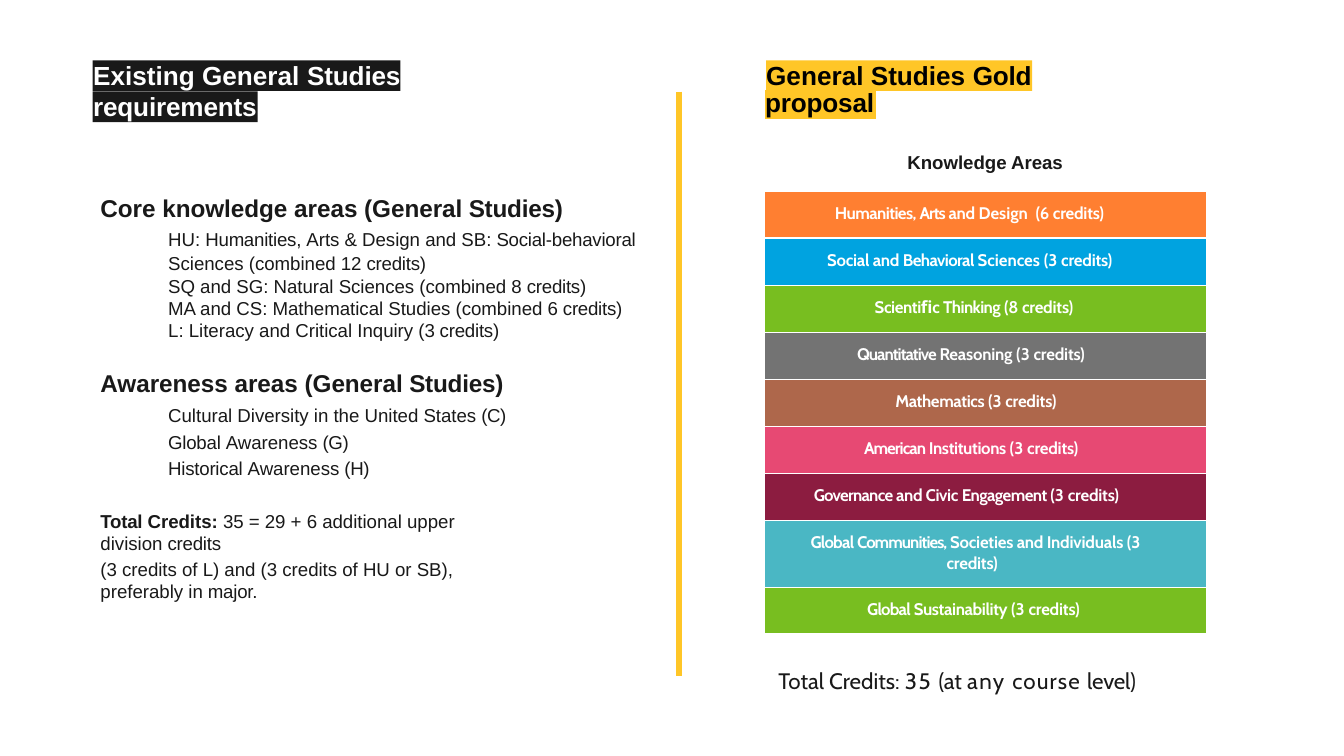
"""Build a slide comparing existing General Studies requirements with the Gold proposal."""
from lxml.etree import SubElement
from pptx import Presentation
from pptx.dml.color import RGBColor
from pptx.enum.shapes import MSO_CONNECTOR as Connector, MSO_SHAPE as Preset
from pptx.enum.text import PP_ALIGN as Align
from pptx.oxml.ns import qn
from pptx.util import Cm, Pt

GOLD = RGBColor(0xFF, 0xC6, 0x27)
INK = RGBColor(0x19, 0x19, 0x19)
BLACK = RGBColor(0x00, 0x00, 0x00)
WHITE = RGBColor(0xFF, 0xFF, 0xFF)
ORANGE = RGBColor(0xFF, 0x7F, 0x31)
BLUE = RGBColor(0x00, 0xA3, 0xE0)
GREEN = RGBColor(0x78, 0xBE, 0x20)
GRAY = RGBColor(0x73, 0x73, 0x73)
BROWN = RGBColor(0xAE, 0x67, 0x4B)
PINK = RGBColor(0xE7, 0x49, 0x73)
MAROON = RGBColor(0x8C, 0x1C, 0x40)
TEAL = RGBColor(0x4A, 0xB7, 0xC4)

HEADING = dict(size=14, bold=True)
AREA = dict(size=13, bold=True, left=0.02)
ITEM = dict(size=10, left=1.3)
TOTAL = dict(size=10, left=0.02, right=3)

REQUIREMENTS = [
    ([("Core knowledge areas (General ", 0), ("Studies)", -0.1)], AREA),
    ([("HU: ", 0), ("Humanities, ", -0.1), ("Arts & Design and SB: ", 0),
      ("Social-behavioral ", -0.1), ("Sciences (combined 12 ", 0), ("credits)", -0.1)],
     dict(ITEM, before=2.2, lines=1.06)),
    ([("SQ and SG: Natural Sciences (combined 8 ", 0), ("credits)", -0.1)], ITEM),
    ([("MA and CS: Mathematical Studies (combined 6 ", 0), ("credits) ", -0.1),
      ("L: Literacy and Critical Inquiry (3", 0), (" credits)", -0.1)],
     dict(ITEM, right=0.25)),
    ([("Awareness areas (General ", 0), ("Studies)", -0.1)], dict(AREA, before=14)),
    ([("Cultural Diversity in the United States ", 0), ("(C) ", -0.2),
      ("Global ", -0.1), ("Awareness ", 0), ("(G)", -0.2)],
     dict(ITEM, before=0.8, lines=1.22, right=2)),
    ([("Historical ", -0.1), ("Awareness ", 0), ("(H)", -0.2)], dict(ITEM, before=1.9)),
    ([("Total ", -0.1, True), ("Credits: ", 0, True),
      ("35 = 29 + 6 additional upper division ", 0), ("credits", -0.1)],
     dict(TOTAL, before=16.3)),
    ([("(3 credits of L) and (3 credits of HU or SB), preferably in ", 0),
      ("major.", -0.1)], dict(TOTAL, before=1.8)),
]

KNOWLEDGE_AREAS = [
    (ORANGE, 1.33, [("Humanities, ", -0.3), ("Arts ", -0.5), ("and ", -0.2),
                    ("Design", 0), (" ", 2), ("(6 ", 0), ("credits)", -0.1)]),
    (BLUE, 1.18, [("Social", -0.1), (" and ", -0.2), ("Behavioral ", -0.3),
                  ("Sciences (3 ", 0), ("credits)", -0.1)]),
    (GREEN, 2.08, [("Scientiﬁc ", -0.2), ("Thinking ", -0.3), ("(8", 0),
                   (" credits)", -0.1)]),
    (GRAY, 1.75, [("Quantitative ", -0.5), ("Reasoning ", -0.1), ("(3 ", 0),
                  ("credits)", -0.1)]),
    (BROWN, 2.47, [("Mathematics ", -0.2), ("(3", 0), (" credits)", -0.1)]),
    (PINK, 1.88, [("American ", -0.5), ("Institutions ", -0.2), ("(3 ", 0),
                  ("credits)", -0.1)]),
    (MAROON, 0.93, [("Governance ", -0.4), ("and Civic ", -0.2), ("Engagement ", -0.3),
                    ("(3 ", 0), ("credits)", -0.1)]),
    (TEAL, 3.44, [("Global ", -0.4), ("Communities, ", -0.5), ("Societies ", -0.1),
                  ("and ", -0.2), ("Individuals ", -0.1), ("(3 ", 0), ("credits)", -0.1)]),
    (GREEN, 1.94, [("Global ", -0.4), ("Sustainability ", -0.2), ("(3 ", 0),
                   ("credits)", -0.1)]),
]


def write(paragraph, runs, size, color=INK, font="Arial", bold=False,
          left=0, right=0, hanging=0, before=0, lines=None):
    layout = paragraph._p.get_or_add_pPr()
    layout.set("marL", str(Cm(left)))
    layout.set("marR", str(Cm(right)))
    layout.set("indent", str(Cm(-hanging)))
    paragraph.alignment = Align.LEFT
    paragraph.space_before = Pt(before)
    if lines:
        paragraph.line_spacing = lines
    for text, tracking, *strong in runs:
        run = paragraph.add_run()
        run.text = text
        run.font.size = Pt(size)
        run.font.name = font
        run.font.bold = bool(strong) or bold
        run.font.color.rgb = color
        run._r.get_or_add_rPr().set("spc", str(round(tracking * 100)))


def set_margins(holder, top=0):
    holder.margin_left = holder.margin_right = holder.margin_bottom = 0
    holder.margin_top = Cm(top)


def add_text(slide, left, top, width, height, paragraphs, inset=0.03):
    frame = slide.shapes.add_textbox(Cm(left), Cm(top), Cm(width), Cm(height)).text_frame
    frame.word_wrap = True
    set_margins(frame, inset)
    for index, (runs, style) in enumerate(paragraphs):
        paragraph = frame.add_paragraph() if index else frame.paragraphs[0]
        write(paragraph, runs, **style)


def add_highlight(slide, left, top, width, color):
    band = slide.shapes.add_shape(Preset.RECTANGLE, Cm(left), Cm(top), Cm(width), Cm(0.58))
    band.shadow.inherit = False
    band.fill.solid()
    band.fill.fore_color.rgb = color
    band.line.fill.background()
    return band


def add_divider(slide):
    divider = slide.shapes.add_connector(
        Connector.STRAIGHT, Cm(12.83), Cm(1.73), Cm(12.83), Cm(12.78))
    divider.line.color.rgb = GOLD
    divider.line.width = Pt(3)
    SubElement(divider._element.spPr, qn("a:effectLst"))


def style_cell(cell, color=None, top=0, bordered=True):
    set_margins(cell, top)
    properties = cell._tc.get_or_add_tcPr()
    for side in ("a:lnL", "a:lnR", "a:lnT", "a:lnB"):
        edge = SubElement(properties, qn(side), w=str(Pt(0.75)))
        if bordered:
            paint = SubElement(edge, qn("a:solidFill"))
            SubElement(paint, qn("a:srgbClr"), val=str(WHITE))
        else:
            SubElement(edge, qn("a:noFill"))
    if color is None:
        cell.fill.background()
    else:
        cell.fill.solid()
        cell.fill.fore_color.rgb = color


def add_proposal_table(slide):
    heights = [0.56, 1.35] + [0.89] * 7 + [1.26, 0.88]
    table = slide.shapes.add_table(
        len(heights), 2, Cm(14.45), Cm(1.7), Cm(8.36), Cm(sum(heights))).table
    table.first_row = table.horz_banding = False
    for column, width in zip(table.columns, (2.11, 6.25)):
        column.width = Cm(width)
    for row, height in zip(table.rows, heights):
        row.height = Cm(height)

    proposal, spacer = table.rows[0].cells
    style_cell(proposal, GOLD, bordered=False)
    write(proposal.text_frame.paragraphs[0], [("proposal", -0.1)],
          color=BLACK, lines=Pt(15), left=0.01, **HEADING)
    style_cell(spacer, bordered=False)
    SubElement(spacer.text_frame.paragraphs[0]._p, qn("a:endParaRPr"), sz="800")

    for row in range(1, len(heights)):
        table.cell(row, 0).merge(table.cell(row, 1))
    caption = table.cell(1, 0)
    style_cell(caption, top=0.62)
    write(caption.text_frame.paragraphs[0], [("Knowledge Areas", 0)],
          size=10, bold=True, left=2.7)
    for row, (color, left, runs) in enumerate(KNOWLEDGE_AREAS, start=2):
        area = table.cell(row, 0)
        style_cell(area, color, top=0.23)
        wrapped = dict(hanging=2.57, right=0.5) if color == TEAL else {}
        write(area.text_frame.paragraphs[0], runs, size=9, color=WHITE,
              font="Cabin", bold=True, left=left, **wrapped)


def main():
    deck = Presentation()
    deck.slide_width, deck.slide_height = Cm(25.4), Cm(14.29)
    slide = deck.slides.add_slide(deck.slide_layouts[6])
    add_divider(slide)
    add_text(slide, 14.68, 12.59, 7.09, 0.58, [(
        [("Total Credits: ", 0), ("35 ", 0.8), ("(at ", 0), ("any ", 0.8),
         ("course ", 0.6), ("level)", -0.1)],
        dict(size=12, font="Cabin", left=0.03))])
    gold_title = add_highlight(slide, 14.48, 1.14, 5.03, GOLD).text_frame
    set_margins(gold_title)
    write(gold_title.paragraphs[0], [("General Studies ", 0), ("Gold", -0.2)],
          color=BLACK, lines=Pt(16.2), **HEADING)
    add_proposal_table(slide)
    title_lines = [
        (1.14, 5.82, [("Existing General ", 0), ("Studies", -0.1)]),
        (1.73, 3.12, [("requirements", -0.1)]),
    ]
    for top, width, runs in title_lines:
        add_highlight(slide, 1.75, top, width, INK)
        add_text(slide, 1.73, top - 0.05, width + 0.1, 0.66,
                 [(runs, dict(HEADING, color=WHITE, left=0.03))])
    add_text(slide, 1.88, 3.48, 10.29, 7.04, REQUIREMENTS, inset=0.18)
    deck.save("out.pptx")


if __name__ == "__main__":
    main()
